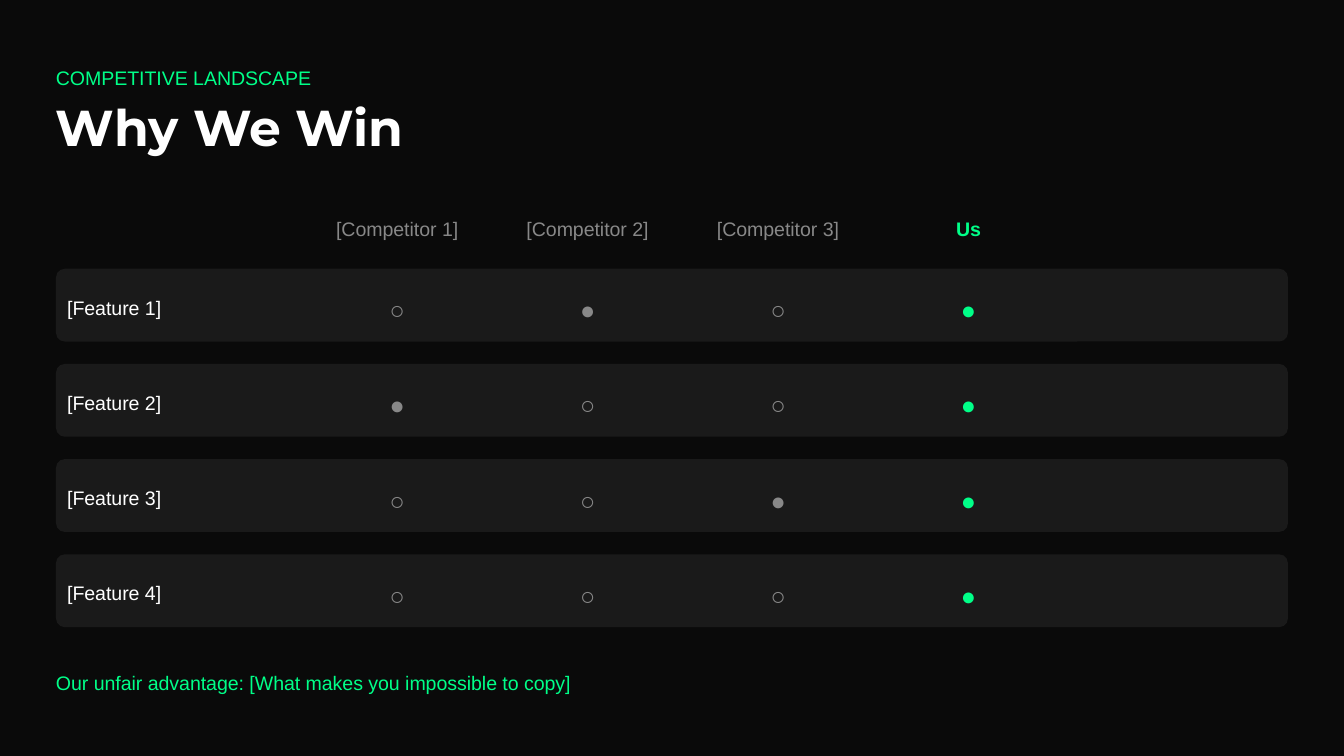
from pptx import Presentation
from pptx.dml.color import RGBColor
from pptx.enum.shapes import MSO_SHAPE as Shape
from pptx.enum.text import PP_ALIGN as Align
from pptx.util import Inches, Pt


def tint(code):
    """Turn a hex string into a colour."""
    return RGBColor.from_string(code)


class Deck:
    """Style and current slide, measured in a grid of 24 columns by 13.5 rows."""

    back, card = "0A0A0A", "1A1A1A"
    white, grey, green = "FFFFFF", "888888", "00FF88"
    body, head = "Arial", "Montserrat"

    def __init__(self):
        """Open a widescreen deck with one dark blank slide."""
        self.prs = Presentation()
        self.prs.slide_width = Inches(10)
        self.prs.slide_height = Inches(5.625)
        self.unit = self.prs.slide_width / 24
        self.slide = self.prs.slides.add_slide(self.prs.slide_layouts[6])
        fill = self.slide.background.fill
        fill.solid()
        fill.fore_color.rgb = tint(self.back)

    def grid(self, *cells):
        """Turn grid units into slide lengths."""
        return [round(cell * self.unit) for cell in cells]

    def text(self, words, x, y, w, h=0.5, color=white, size=10.5, lead=15,
             above=3, below=3, font=body, bold=False, align=Align.LEFT):
        """Add one line of text without margins."""
        box = self.slide.shapes.add_textbox(*self.grid(x, y, w, h))
        frame = box.text_frame
        frame.word_wrap = True
        frame.margin_left = frame.margin_right = 0
        frame.margin_top = frame.margin_bottom = 0
        frame.text = words
        para = frame.paragraphs[0]
        para.alignment = align
        para.line_spacing = Pt(lead)
        para.space_before, para.space_after = Pt(above), Pt(below)
        face = para.runs[0].font
        face.name, face.size, face.bold = font, Pt(size), bold
        face.color.rgb = tint(color)

    def cell(self, words, col, y, **style):
        """Add centred text in a table column, green in the last one."""
        color = self.green if col == 3 else self.grey
        self.text(words, 5.57 + 3.4 * col, y, 3.05, color=color,
                  align=Align.CENTER, **style)

    def band(self, y):
        """Add the rounded card behind a feature."""
        card = self.slide.shapes.add_shape(
            Shape.ROUNDED_RECTANGLE, *self.grid(1, y, 22, 1.3))
        card.adjustments[0] = 0.12
        card.shadow.inherit = False
        card.fill.solid()
        card.fill.fore_color.rgb = tint(self.card)
        card.line.fill.background()

    def row(self, name, marks, y):
        """Add a feature with one mark for each rival and for us."""
        self.band(y)
        self.text(name, 1.2, y + 0.4, 4.08)
        for col, mark in enumerate(marks):
            self.cell(mark, col, y + 0.3, h=0.7, size=13.5, lead=21)


def main():
    """Build the comparison slide."""
    deck = Deck()
    deck.text("COMPETITIVE LANDSCAPE", 1, 1.1, 22.44, color=deck.green, below=6)
    deck.text("Why We Win", 1, 1.8, 11.25, 1, size=27, lead=30,
              above=0, below=18, font=deck.head, bold=True)
    heads = ["[Competitor 1]", "[Competitor 2]", "[Competitor 3]", "Us"]
    for col, name in enumerate(heads):
        deck.cell(name, col, 3.8, bold=name == "Us")
    for num, marks in enumerate(["○●○●", "●○○●", "○○●●", "○○○●"]):
        deck.row(f"[Feature {num + 1}]", marks, 4.8 + 1.7 * num)
    deck.text("Our unfair advantage: [What makes you impossible to copy]",
              1, 11.9, 22.44, color=deck.green, above=12)
    deck.prs.save("out.pptx")


if __name__ == "__main__":
    main()
